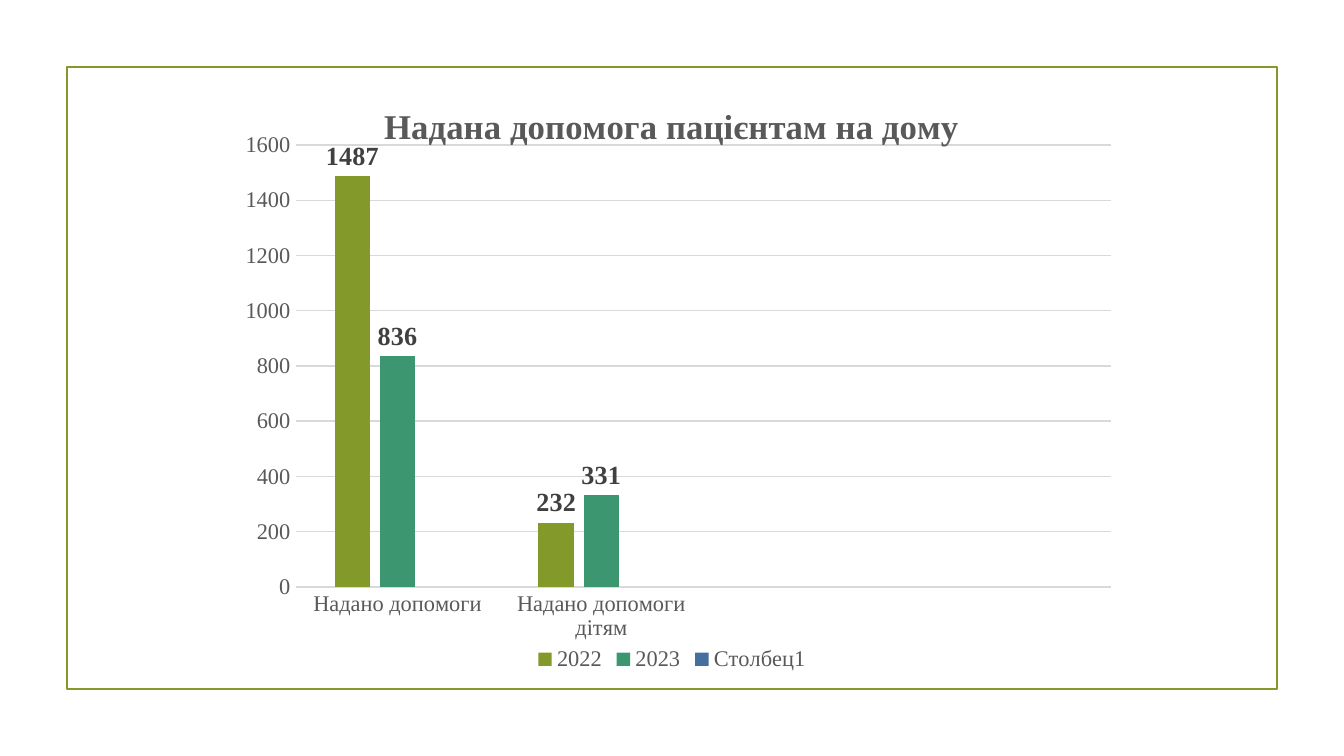
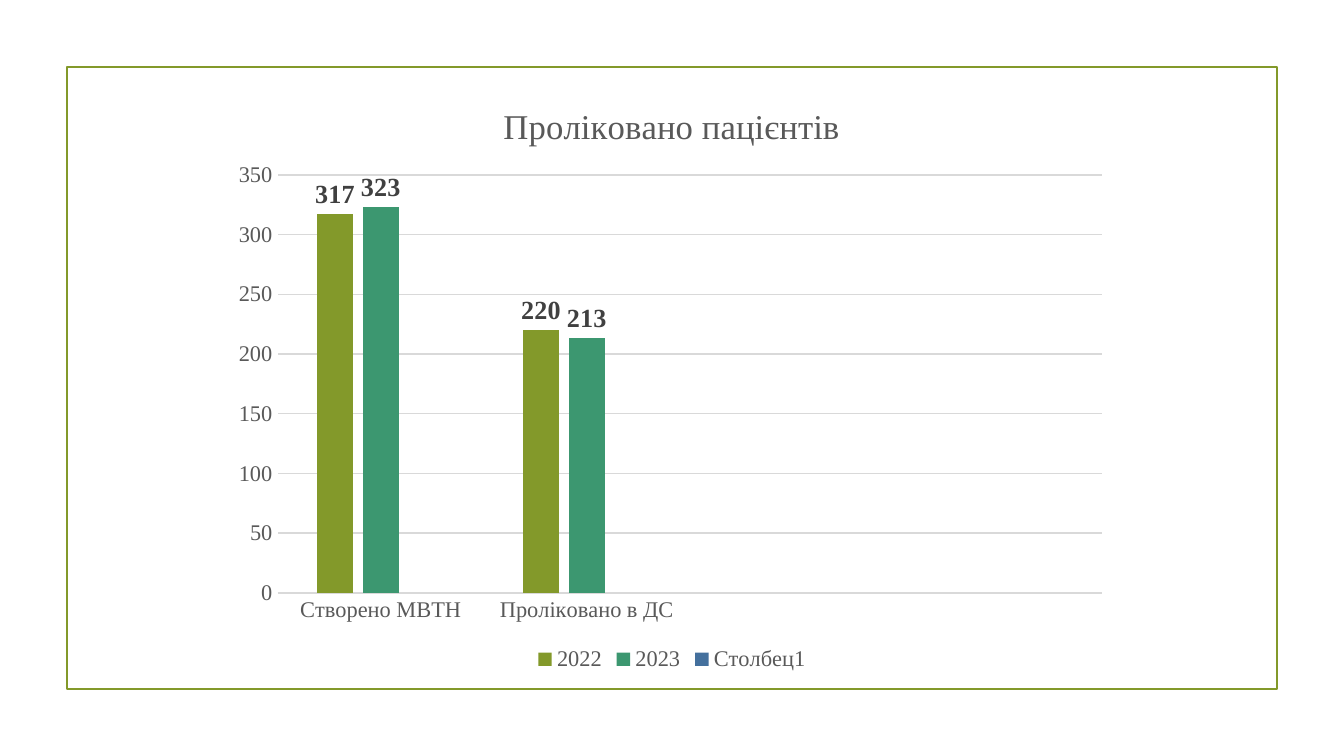
from lxml import etree
from pptx import Presentation
from pptx.chart.data import CategoryChartData
from pptx.dml.color import RGBColor
from pptx.enum import chart as ch, shapes
from pptx.oxml.ns import qn
from pptx.util import Pt

# Content: the two trailing categories are empty
SERIES = ("2022", "2023", "Столбец1")
CHARTS = [
    dict(title="Надана допомога пацієнтам на дому", bold=True,
         categories=("Надано допомоги", "Надано допомоги дітям", "", ""),
         values=((1487, 232, None, None), (836, 331, None, None), (None,) * 4),
         plot=(0.08, 0.11, 0.91, 0.74)),
    dict(title="Проліковано пацієнтів", bold=False,
         categories=("Створено МВТН", "Проліковано в ДС", "", ""),
         values=((317, 220, None, None), (323, 213, None, None), (None,) * 4),
         plot=(0.06, 0.16, 0.92, 0.7)),
]

# Shared style
FONT = "Times New Roman"
OLIVE = RGBColor(0x83, 0x99, 0x2A)
GREEN = RGBColor(0x3C, 0x97, 0x70)
BLUE = RGBColor(0x44, 0x70, 0x9D)
GRAY = RGBColor(0x59, 0x59, 0x59)
DARK = RGBColor(0x40, 0x40, 0x40)
GRID = RGBColor(0xD9, 0xD9, 0xD9)
BLACK = RGBColor(0, 0, 0)
SERIES_STYLE = ((OLIVE, 14, True), (GREEN, 14, True), (BLUE, 12, False))
SLIDE_W, SLIDE_H, MARGIN = 720, 405, 36
CHART_BOX = (120, 42.5, 480, 320)


def set_font(font, size, color, bold=False):
    font.name, font.size, font.bold = FONT, Pt(size), bold
    font.color.rgb = color


def set_line(line, color, width):
    line.color.rgb = color
    line.width = Pt(width)


def add_frame(slide):
    sp = slide.shapes.add_shape(
        shapes.MSO_SHAPE.RECTANGLE, Pt(MARGIN), Pt(MARGIN),
        Pt(SLIDE_W - 2 * MARGIN), Pt(SLIDE_H - 2 * MARGIN))
    sp.shadow.inherit = False
    sp.fill.background()
    set_line(sp.line, OLIVE, 1.25)


def place_plot(chart, box):
    plot_area = chart.element.find(".//" + qn("c:plotArea"))
    layout = plot_area.find(qn("c:layout"))
    if layout is None:
        layout = etree.Element(qn("c:layout"))
        plot_area.insert(0, layout)
    manual = etree.SubElement(layout, qn("c:manualLayout"))
    settings = [("layoutTarget", "inner"), ("xMode", "edge"), ("yMode", "edge")]
    for tag, value in settings + list(zip("xywh", box)):
        etree.SubElement(manual, qn("c:" + tag)).set("val", str(value))


def add_chart(slide, item):
    data = CategoryChartData()
    data.categories = item["categories"]
    for name, values in zip(SERIES, item["values"]):
        data.add_series(name, values)
    chart = slide.shapes.add_chart(
        ch.XL_CHART_TYPE.COLUMN_CLUSTERED, *map(Pt, CHART_BOX), data).chart
    set_font(chart.font, 10, BLACK)

    # Title and legend
    p = chart.chart_title.text_frame.paragraphs[0]
    p.text = item["title"]
    set_font(p.font, 18.6, GRAY, item["bold"])
    chart.chart_title.include_in_layout = False
    chart.has_legend = True
    chart.legend.position = ch.XL_LEGEND_POSITION.BOTTOM
    chart.legend.include_in_layout = False
    set_font(chart.legend.font, 12, GRAY)

    # Axes
    for axis in (chart.category_axis, chart.value_axis):
        axis.major_tick_mark = axis.minor_tick_mark = ch.XL_TICK_MARK.NONE
        set_font(axis.tick_labels.font, 12, GRAY)
    set_line(chart.category_axis.format.line, GRID, 0.75)
    chart.value_axis.format.line.fill.background()
    set_line(chart.value_axis.major_gridlines.format.line, GRID, 0.75)

    # Columns and their labels
    plot = chart.plots[0]
    plot.gap_width, plot.overlap, plot.vary_by_categories = 219, -27, False
    for series, (color, size, bold) in zip(plot.series, SERIES_STYLE):
        series.format.fill.solid()
        series.format.fill.fore_color.rgb = color
        labels = series.data_labels
        labels.show_value = True
        labels.position = ch.XL_LABEL_POSITION.OUTSIDE_END
        set_font(labels.font, size, DARK, bold)
    place_plot(chart, item["plot"])


def main():
    prs = Presentation()
    prs.slide_width, prs.slide_height = Pt(SLIDE_W), Pt(SLIDE_H)
    for item in CHARTS:
        slide = prs.slides.add_slide(prs.slide_layouts[6])
        add_frame(slide)
        add_chart(slide, item)
    prs.save("out.pptx")


if __name__ == "__main__":
    main()
